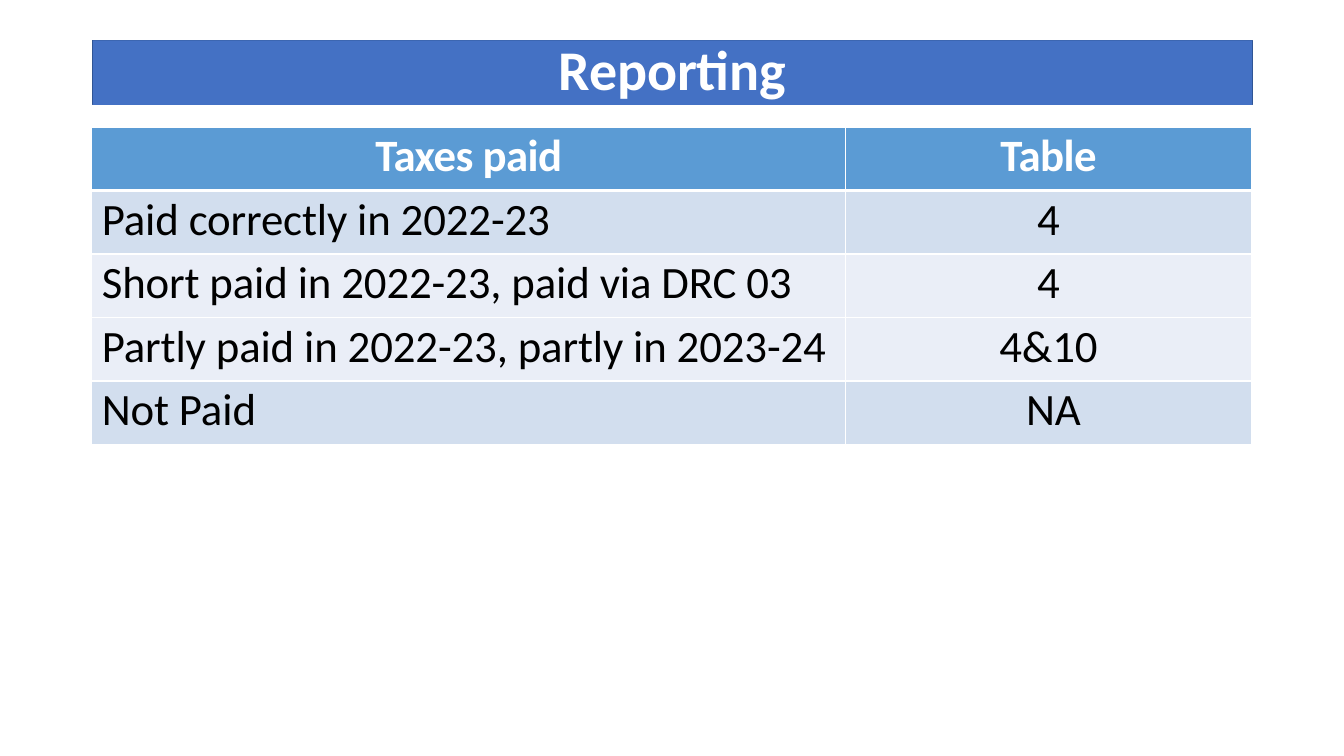
from lxml import etree
from pptx import Presentation
from pptx.dml.color import RGBColor
from pptx.enum.text import MSO_ANCHOR, MSO_AUTO_SIZE, PP_ALIGN
from pptx.oxml.ns import qn
from pptx.util import Pt

PX = 9144  # 100 px to the inch
TITLE_ONLY = 5
CENTER, LEFT = PP_ALIGN.CENTER, PP_ALIGN.LEFT
MIDDLE, TOP = MSO_ANCHOR.MIDDLE, MSO_ANCHOR.TOP
WHITE = RGBColor(0xFF, 0xFF, 0xFF)
BLACK = RGBColor(0x00, 0x00, 0x00)
TITLE_BLUE = RGBColor(0x44, 0x71, 0xC4)
OUTLINE_BLUE = RGBColor(0x2E, 0x52, 0x8F)
HEADER_BLUE = RGBColor(0x5B, 0x9B, 0xD4)
DARK_BAND = RGBColor(0xD2, 0xDE, 0xEE)
LIGHT_BAND = RGBColor(0xEA, 0xEE, 0xF7)


def write(frame, text, size, color, bold=False, align=CENTER, spacing=0, before=0):
    para = frame.paragraphs[0]
    para.alignment = align
    para.space_before = Pt(before)
    span = para.add_run()
    span.text = text
    span.font.name = "Calibri"
    span.font.size = Pt(size)
    span.font.bold = bold
    span.font.color.rgb = color
    span.font._element.set("spc", str(spacing))  # hundredths of a point
    return para


def add_border(cell, side, points):
    properties = cell._tc.get_or_add_tcPr()
    line = etree.SubElement(properties, qn("a:ln" + side), w=str(Pt(points)))
    fill = etree.SubElement(line, qn("a:solidFill"))
    etree.SubElement(fill, qn("a:srgbClr"), val=str(WHITE))


deck = Presentation()
deck.slide_width, deck.slide_height = 1333 * PX, 750 * PX
page = deck.slides.add_slide(deck.slide_layouts[TITLE_ONLY])

# Title outline
left, top, width, height = 92, 40, 1150, 64
builder = page.shapes.build_freeform(left, top + height, scale=PX)
builder.add_line_segments(
    [(left + width, top + height), (left + width, top), (left, top)], close=True
)
outline = builder.convert_to_shape()
outline.shadow.inherit = False
outline.fill.background()
outline.line.color.rgb = OUTLINE_BLUE
outline.line.width = Pt(0.96)

# Title bar, in front of its outline
title = page.shapes.title
page.shapes._spTree.append(title._element)
title.left, title.top, title.width, title.height = (
    side * PX for side in (left, top, width, height)
)
title.fill.solid()
title.fill.fore_color.rgb = TITLE_BLUE
frame = title.text_frame
frame.auto_size = MSO_AUTO_SIZE.NONE
frame.word_wrap = True
frame.vertical_anchor = MIDDLE
frame.margin_left = frame.margin_top = frame.margin_right = frame.margin_bottom = 0
write(frame, "Reporting", 40, WHITE, bold=True, spacing=-10).line_spacing = Pt(42.1)

# Table of taxes paid
rows = [
    ("Taxes paid", "Table", HEADER_BLUE),
    ("Paid correctly in 2022-23", "4", DARK_BAND),
    ("Short paid in 2022-23, paid via DRC 03", "4", LIGHT_BAND),
    ("Partly paid in 2022-23, partly in 2023-24", "4&10", LIGHT_BAND),
    ("Not Paid", "NA", DARK_BAND),
]
column_widths = (748, 402)
row_height = 63
table = page.shapes.add_table(
    len(rows), len(column_widths), 91 * PX, 126 * PX,
    sum(column_widths) * PX, len(rows) * row_height * PX,
).table
for column, column_width in zip(table.columns, column_widths):
    column.width = column_width * PX

for row_index, (taxes, table_number, band) in enumerate(rows):
    header = row_index == 0
    for column_index, text in enumerate((taxes, table_number)):
        cell = table.cell(row_index, column_index)
        label = column_index == 0 and not header
        cell.margin_left = 10 * PX if label or text == "NA" else 0
        cell.margin_right = cell.margin_bottom = 0
        cell.margin_top = 2 * PX
        cell.vertical_anchor = TOP
        for side in "LR":
            add_border(cell, side, 1)
        add_border(cell, "T", 3 if row_index == 1 else 1)
        add_border(cell, "B", 3 if header else 1)
        cell.fill.solid()
        cell.fill.fore_color.rgb = band
        write(
            cell.text_frame, text, 32, WHITE if header else BLACK, bold=header,
            align=LEFT if label else CENTER, spacing=-40 if header else -10, before=1.6,
        )

deck.save("out.pptx")
